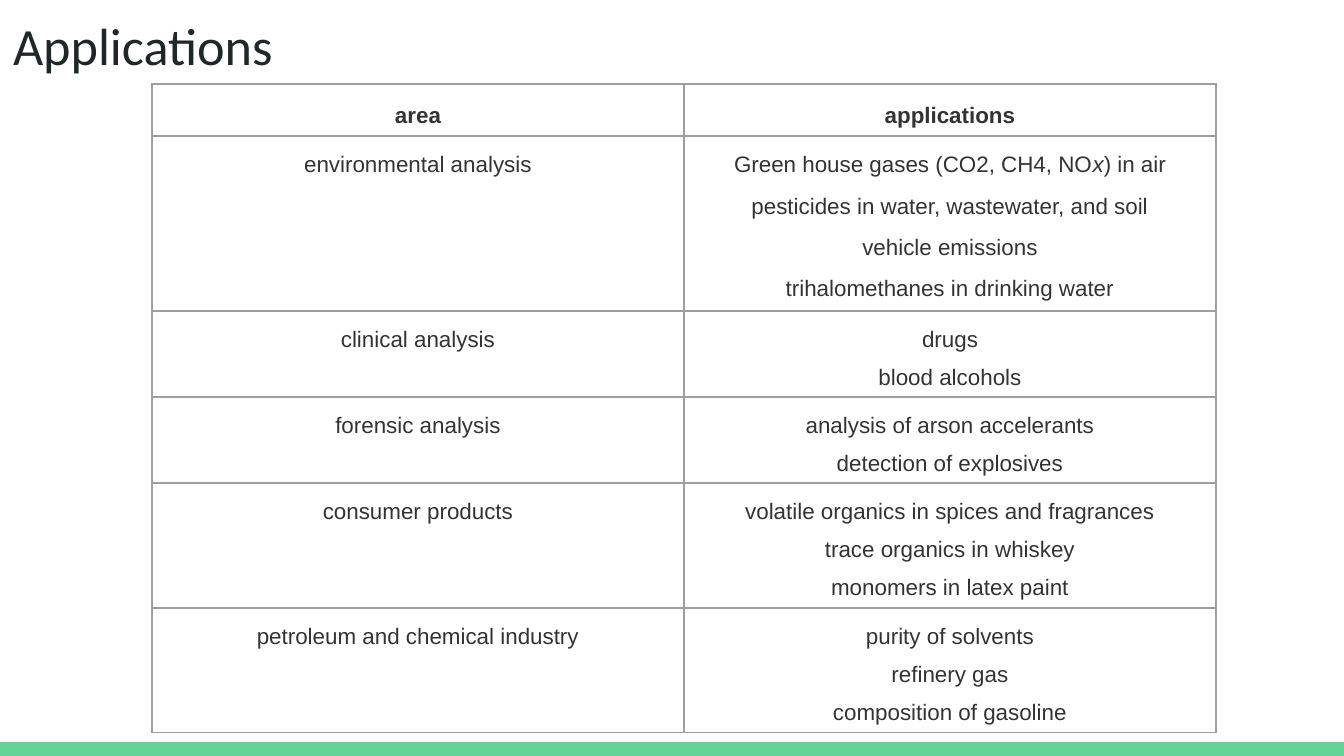
from dataclasses import dataclass

from lxml import etree
from pptx import Presentation
from pptx import util as u
from pptx.dml.color import RGBColor
from pptx.enum import shapes, text
from pptx.oxml.ns import qn

EMU_PER_PX = 914400 / 134.4
SLIDE_W, SLIDE_H = 1344, 756
COLUMN_W = 532
GREEN, TITLE_INK, TABLE_INK, BORDER = "63D297", "202729", "333333", "9E9E9E"


@dataclass(frozen=True)
class Row:
    area: str
    applications: tuple[str, ...]  # text between asterisks is italic
    height: int
    bold: bool = False
    inset: int = 4
    space_before: int = 0


ROWS = [
    Row("area", ("applications",), 52, bold=True, inset=7),
    Row("environmental analysis",
        ("Green house gases (CO2, CH4, NO*x*) in air",
         "pesticides in water, wastewater, and soil",
         "vehicle emissions",
         "trihalomethanes in drinking water"), 175, space_before=2),
    Row("clinical analysis", ("drugs", "blood alcohols"), 86),
    Row("forensic analysis",
        ("analysis of arson accelerants", "detection of explosives"), 86),
    Row("consumer products",
        ("volatile organics in spices and fragrances",
         "trace organics in whiskey",
         "monomers in latex paint"), 125),
    Row("petroleum and chemical industry",
        ("purity of solvents", "refinery gas", "composition of gasoline"), 125),
]


def px(length: int) -> u.Emu:
    return u.Emu(round(length * EMU_PER_PX))


def rgb(value: str) -> RGBColor:
    return RGBColor.from_string(value)


def apply(target, values: dict) -> None:
    for name, value in values.items():
        setattr(target, name, value)


def set_font(font, family: str, size: int, colour: str, **styles: bool) -> None:
    apply(font, {"name": family, "size": u.Pt(size), **styles})
    font.color.rgb = rgb(colour)


def set_insets(frame, across: int, down: int) -> None:
    apply(frame, {"margin_left": px(across), "margin_right": px(across),
                  "margin_top": px(down), "margin_bottom": px(down)})


def add_borders(cell) -> None:
    properties = cell._tc.get_or_add_tcPr()
    for position, side in enumerate(("lnL", "lnR", "lnT", "lnB")):
        line = etree.Element(qn(f"a:{side}"), w=str(u.Pt(0.75)))
        fill = etree.SubElement(line, qn("a:solidFill"))
        etree.SubElement(fill, qn("a:srgbClr"), val=BORDER)
        properties.insert(position, line)


def fill_cell(cell, lines: tuple[str, ...], row: Row) -> None:
    cell.fill.background()
    add_borders(cell)
    set_insets(cell, 7, row.inset)
    cell.vertical_anchor = text.MSO_ANCHOR.TOP
    frame = cell.text_frame
    for index, line in enumerate(lines):
        paragraph = frame.add_paragraph() if index else frame.paragraphs[0]
        apply(paragraph, {"alignment": text.PP_ALIGN.CENTER, "line_spacing": 1.5,
                          "space_before": u.Pt(row.space_before)})
        for part, words in enumerate(line.split("*")):
            run = paragraph.add_run()
            run.text = words
            set_font(run.font, "Arial", 12, TABLE_INK,
                     bold=row.bold, italic=part % 2 == 1)


def add_footer_band(slide) -> None:
    band = slide.shapes.add_shape(shapes.MSO_SHAPE.RECTANGLE,
                                  px(0), px(742), px(SLIDE_W), px(14))
    band.shadow.inherit = False
    band.fill.solid()
    band.fill.fore_color.rgb = rgb(GREEN)
    band.line.fill.background()


def set_title(slide, words: str) -> None:
    title = slide.shapes.title
    apply(title, {"left": px(0), "top": px(0), "width": px(1253), "height": px(84)})
    frame = title.text_frame
    apply(frame, {"text": words, "word_wrap": True,
                  "auto_size": text.MSO_AUTO_SIZE.NONE,
                  "vertical_anchor": text.MSO_ANCHOR.TOP})
    set_insets(frame, 13, 13)
    heading = frame.paragraphs[0]
    heading.alignment = text.PP_ALIGN.LEFT
    set_font(heading.runs[0].font, "Calibri", 28, TITLE_INK)


def add_applications_table(slide) -> None:
    table = slide.shapes.add_table(
        len(ROWS), 2, px(152), px(84), px(2 * COLUMN_W),
        px(sum(row.height for row in ROWS))).table
    apply(table, {"first_row": False, "horz_banding": False})
    for column in table.columns:
        column.width = px(COLUMN_W)
    for index, row in enumerate(ROWS):
        table.rows[index].height = px(row.height)
        fill_cell(table.cell(index, 0), (row.area,), row)
        fill_cell(table.cell(index, 1), row.applications, row)


def main() -> None:
    deck = Presentation()
    apply(deck, {"slide_width": px(SLIDE_W), "slide_height": px(SLIDE_H)})
    slide = deck.slides.add_slide(deck.slide_layouts[5])
    add_footer_band(slide)
    set_title(slide, "Applications")
    add_applications_table(slide)
    deck.save("out.pptx")


if __name__ == "__main__":
    main()
